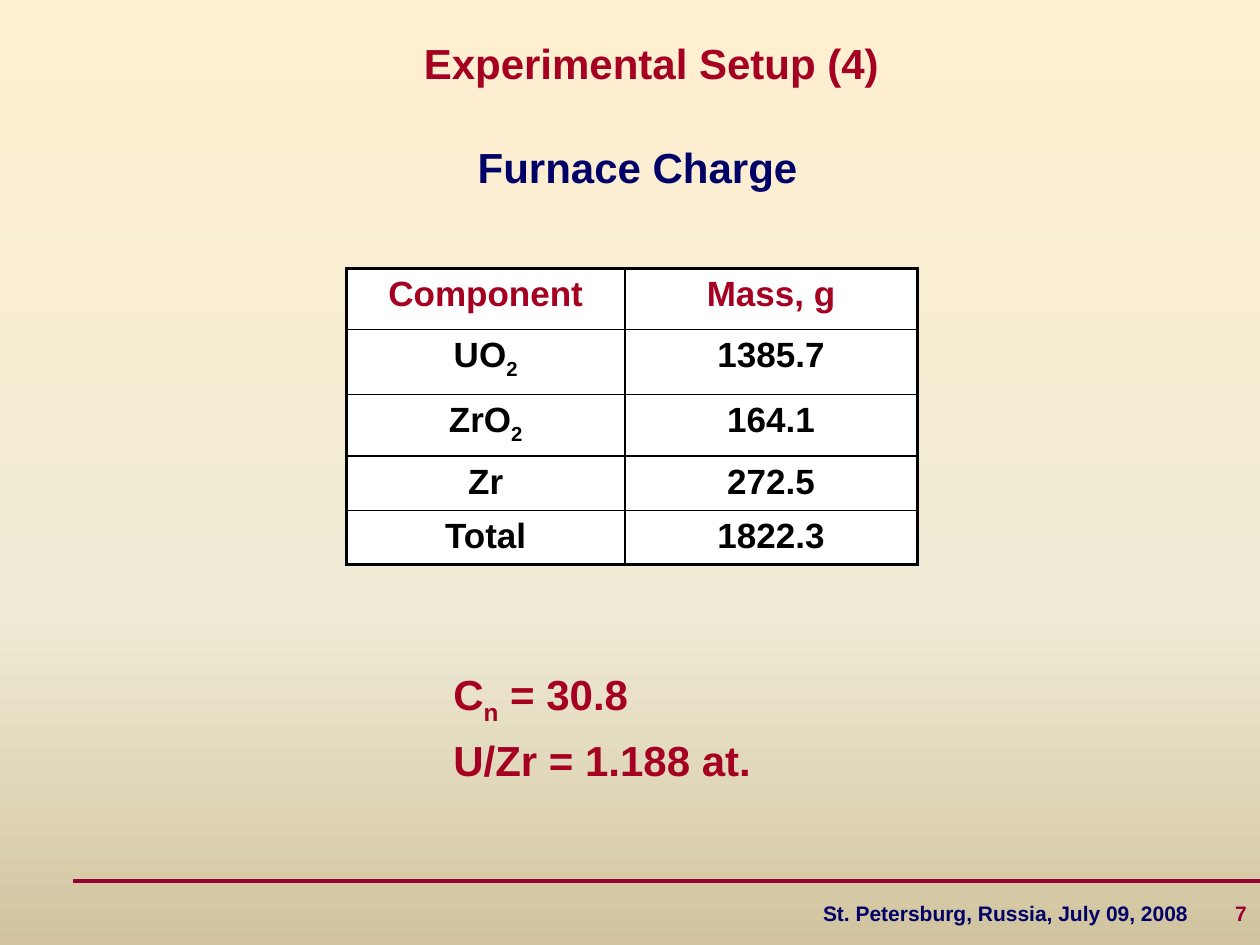
from copy import deepcopy
from dataclasses import dataclass

from lxml.etree import SubElement
from pptx import Presentation
from pptx.dml.color import RGBColor
from pptx.enum.shapes import MSO_CONNECTOR
from pptx.enum.text import MSO_ANCHOR, MSO_AUTO_SIZE, PP_ALIGN
from pptx.oxml.ns import qn
from pptx.util import Pt

CRIMSON, NAVY, MAROON, BLACK, WHITE = "A50021", "000066", "990033", "000000", "FFFFFF"
THIN, THICK = 1, 2.25


@dataclass
class Span:
    text: str
    color: str
    size: float
    subscript: bool = False


@dataclass
class Frame:
    left: float
    top: float
    width: float
    height: float

    def lengths(self) -> list:
        return [Pt(value) for value in (self.left, self.top, self.width, self.height)]


def rgb(color: str) -> RGBColor:
    return RGBColor.from_string(color)


def add_spans(para, spans: list[Span]) -> None:
    for item in spans:
        span = para.add_run()
        span.text = item.text
        formats = {"name": "Arial", "size": Pt(item.size), "bold": True}
        for name, value in formats.items():
            setattr(span.font, name, value)
        span.font.color.rgb = rgb(item.color)
        if item.subscript:
            span.font._element.set("baseline", "-25000")


def fill_box(box, paragraphs: list[list[Span]], align=PP_ALIGN.CENTER,
             anchor=MSO_ANCHOR.MIDDLE) -> None:
    formats = {"word_wrap": True, "auto_size": MSO_AUTO_SIZE.NONE, "vertical_anchor": anchor}
    for name, value in formats.items():
        setattr(box.text_frame, name, value)
    for index, spans in enumerate(paragraphs):
        para = box.text_frame.add_paragraph() if index else box.text_frame.paragraphs[0]
        para.alignment = align
        if index:
            para.space_before = Pt(4.8)
        add_spans(para, spans)


def paint_background(page, stops: list[tuple[float, str]]) -> None:
    fill = page.background.fill
    fill.gradient()
    fill.gradient_angle = 270
    stop_list = page.element.find(".//" + qn("a:gsLst"))
    while len(stop_list) < len(stops):
        stop_list.append(deepcopy(stop_list[0]))
    for stop, (position, color) in zip(fill.gradient_stops, stops):
        stop.position = position
        stop.color.rgb = rgb(color)


def set_border(cell, side: str, width: float) -> None:
    line = SubElement(cell._tc.get_or_add_tcPr(), qn(f"a:ln{side}"), w=str(Pt(width)))
    solid = SubElement(line, qn("a:solidFill"))
    SubElement(solid, qn("a:srgbClr"), val=BLACK)


def add_charge_table(page, frame: Frame, widths: list[float], heights: list[float],
                     rows: list[list[list[Span]]]) -> None:
    table = page.shapes.add_table(len(rows), len(widths), *frame.lengths()).table
    for column, width in zip(table.columns, widths):
        column.width = Pt(width)
    for row, height in zip(table.rows, heights):
        row.height = Pt(height)
    for row_index, row in enumerate(rows):
        for column_index, spans in enumerate(row):
            cell = table.cell(row_index, column_index)
            outer = {
                "L": column_index == 0,
                "R": column_index == len(widths) - 1,
                "T": row_index == 0,
                "B": row_index == len(rows) - 1,
            }
            for side, is_outer in outer.items():
                set_border(cell, side, THICK if is_outer else THIN)
            cell.fill.solid()
            cell.fill.fore_color.rgb = rgb(WHITE)
            para = cell.text_frame.paragraphs[0]
            para.alignment = PP_ALIGN.CENTER
            add_spans(para, spans)


def add_footer(page) -> None:
    rule = page.shapes.add_connector(MSO_CONNECTOR.STRAIGHT, Pt(41.8), Pt(503.3), Pt(720), Pt(503.3))
    rule.line.color.rgb = rgb(MAROON)
    rule.line.width = Pt(2.25)
    SubElement(rule._element.spPr, qn("a:effectLst"))

    box = page.shapes.add_textbox(*Frame(447.8, 504, 272.2, 36).lengths())
    box.text_frame.margin_left = Pt(22.5)
    box.text_frame.margin_right = Pt(0)
    tabs = SubElement(box.text_frame.paragraphs[0]._p.get_or_add_pPr(), qn("a:tabLst"))
    SubElement(tabs, qn("a:tab"), pos=str(Pt(235.5)), algn="l")
    fill_box(box, [[Span("St. Petersburg, Russia, July 09, 2008\t", NAVY, 12),
                    Span("7", MAROON, 12)]], PP_ALIGN.LEFT)


def main() -> None:
    deck = Presentation()
    deck.slide_width, deck.slide_height = Pt(720), Pt(540)
    page = deck.slides.add_slide(deck.slide_layouts[5])
    paint_background(page, [(0, "FFEFD1"), (0.65, "F0EBD5"), (1, "D1C39F")])
    add_footer(page)

    title = page.shapes.title
    title_frame = Frame(66.2, 0, 612, 71.3)
    for name, value in zip(("left", "top", "width", "height"), title_frame.lengths()):
        setattr(title, name, value)
    fill_box(title, [[Span("Experimental Setup (4)", CRIMSON, 24)]])

    subtitle = page.shapes.add_textbox(*Frame(219.6, 71.3, 289.4, 47.5).lengths())
    fill_box(subtitle, [[Span("Furnace Charge", NAVY, 24)]])

    charge = [("UO", "2", "1385.7"), ("ZrO", "2", "164.1"), ("Zr", "", "272.5"), ("Total", "", "1822.3")]
    rows = [[[Span(heading, CRIMSON, 20)] for heading in ("Component", "Mass, g")]]
    for component, index, mass in charge:
        name = [Span(component, BLACK, 20)]
        if index:
            name.append(Span(index, BLACK, 20, True))
        rows.append([name, [Span(mass, BLACK, 20)]])
    add_charge_table(page, Frame(198, 153.4, 326.2, 169.4), [159.1, 167.1],
                     [34.8, 37.2, 35.3, 31, 31], rows)

    results = page.shapes.add_textbox(*Frame(252, 378.7, 184.3, 64.8).lengths())
    fill_box(results, [
        [Span("C", CRIMSON, 24), Span("n", CRIMSON, 24, True), Span(" = 30.8", CRIMSON, 24)],
        [Span("U/Zr = 1.188 at.", CRIMSON, 24)],
    ], PP_ALIGN.LEFT, MSO_ANCHOR.TOP)

    deck.save("out.pptx")


if __name__ == "__main__":
    main()
